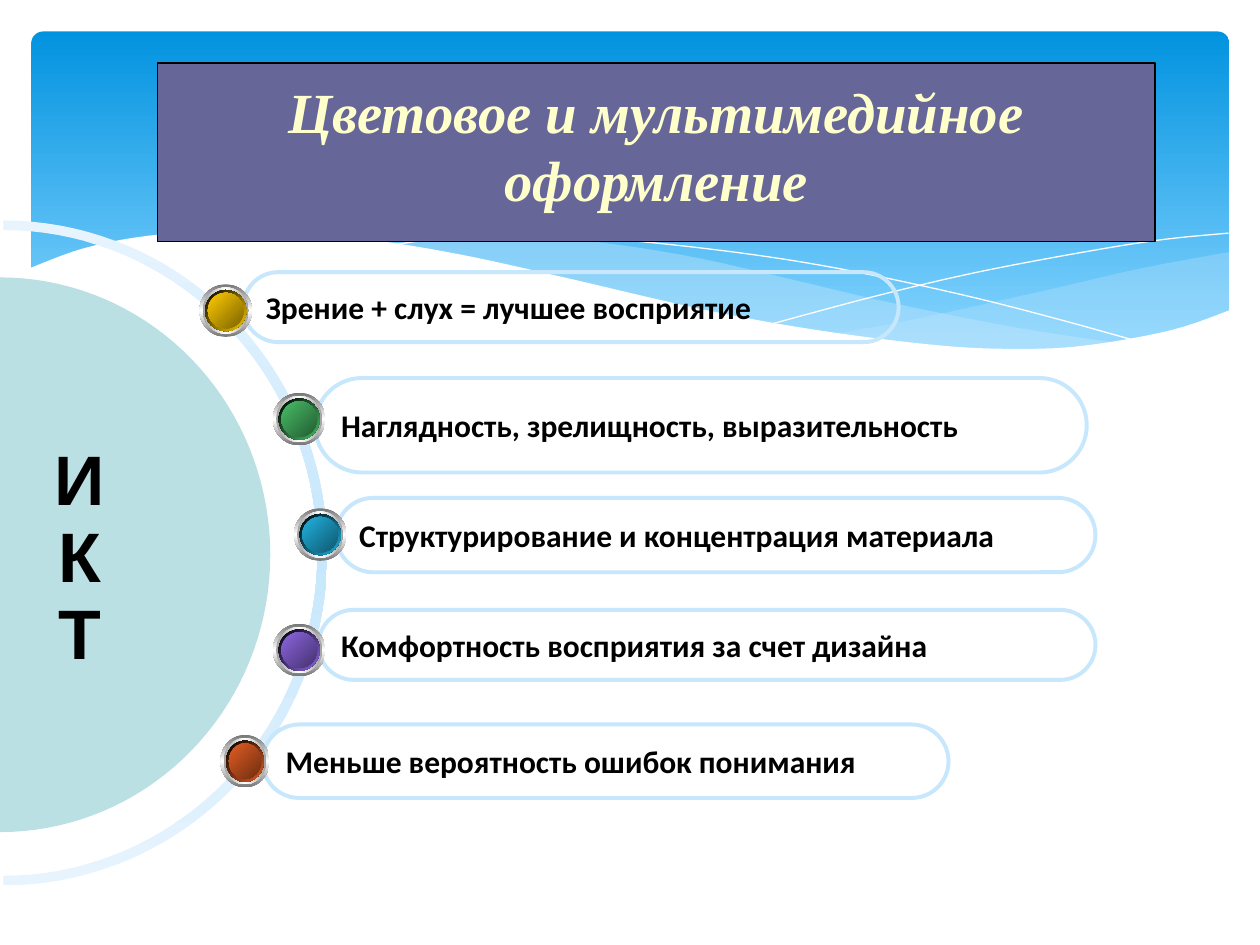
"""Build a slide on colour and multimedia design with a dial of five points."""
import math

import lxml.etree
import pptx
import pptx.dml.color
import pptx.enum.shapes
import pptx.enum.text
import pptx.oxml.ns
import pptx.util

Pt = pptx.util.Pt
RGB = pptx.dml.color.RGBColor
KIND = pptx.enum.shapes.MSO_SHAPE
ALIGN = pptx.enum.text.PP_ALIGN
ANCHOR = pptx.enum.text.MSO_ANCHOR
qn = pptx.oxml.ns.qn

WHITE = RGB(0xFF, 0xFF, 0xFF)
BLACK = RGB(0, 0, 0)
SKY = RGB(0x02, 0x93, 0xE0)
AZURE = RGB(0x83, 0xD3, 0xFE)
PALE = RGB(0xC6, 0xE7, 0xFC)
MIST = RGB(0xE7, 0xF4, 0xFE)
TEAL = RGB(0xBB, 0xE0, 0xE3)
PLUM = RGB(0x66, 0x66, 0x99)
CREAM = RGB(0xFF, 0xFF, 0xCC)
STEEL = RGB(0x76, 0x76, 0x76)
SILVER = RGB(0xA2, 0xA2, 0xA2)

PILLS = [
    ("Меньше вероятность ошибок понимания", (150, 414, 392, 42)),
    ("Комфортность восприятия за счет дизайна", (182, 348.5, 444, 40)),
    ("Структурирование и концентрация материала", (192, 284.5, 434, 42.5)),
    ("Наглядность, зрелищность, выразительность", (180, 216, 441, 54)),
    ("Зрение + слух = лучшее восприятие", (139, 155.5, 374.5, 40)),
]
BEADS = [
    ((114, 162.5, 30), RGB(0xFF, 0xCC, 0x00), RGB(0x7C, 0x63, 0x00)),
    ((156, 224.5, 30), RGB(0x48, 0xBE, 0x67), RGB(0x23, 0x5C, 0x32)),
    ((168, 290.5, 30), RGB(0x21, 0xB3, 0xE1), RGB(0x10, 0x57, 0x6D)),
    ((156, 356.5, 30), RGB(0x8D, 0x67, 0xE1), RGB(0x45, 0x32, 0x6D)),
    ((126, 420, 28), RGB(0xE3, 0x5E, 0x23), RGB(0x6E, 0x2E, 0x11)),
]
FRONT = ([(702.5, 144), (652, 153.4), (599, 165.6), (525, 182), (476, 191)],
         [(476, 191), (527, 197.3), (586, 200), (641, 198), (684, 190.4), (702.5, 178)])
REAR = ([(643, 196.6), (581, 187.2), (508.3, 172.8), (453, 159.8), (399.6, 147.6),
         (352, 139.7), (302.4, 134.6), (247.7, 133.9), (206, 137.5)],
        [(206, 137.5), (246, 143.3), (291, 152), (323.3, 159.8), (381.6, 172.8),
         (445, 185.8), (510.5, 195.8), (565, 200), (603.4, 200), (643, 196.6)])
FALL = [(222.5, 140.4), (254, 136), (299.5, 134.6), (352, 136.8), (419, 144),
        (479, 153.4), (547, 167.8), (598.3, 180.7), (653, 195.8)]
RISE = [(441.4, 185), (500.4, 169.2), (558.7, 155.5), (623.5, 143.3),
        (665.3, 136.8), (702, 133.2)]
CREST = [(703.4, 177), (669.6, 188.6), (621.4, 197.3), (582.5, 199.4), (535.7, 197.3),
         (466.6, 188.6), (399.6, 176.4), (321.8, 158.4), (262.8, 145.4), (210, 136.8),
         (165.6, 133.2), (127.4, 132.5), (85.7, 134.6), (48.2, 141.8), (16.6, 153.4)]


def curve(knots, steps=6):
    """Return points of a smooth curve through the knots."""
    ends = [knots[0], *knots, knots[-1]]
    points = [knots[0]]
    for a, b, c, d in zip(ends, ends[1:], ends[2:], ends[3:]):
        for step in range(1, steps + 1):
            t = step / steps
            points.append(tuple(
                (2 * q + (r - p) * t + (2 * p - 5 * q + 4 * r - s) * t ** 2
                 + (3 * q - p - 3 * r + s) * t ** 3) / 2
                for p, q, r, s in zip(a, b, c, d)))
    return points


def arc(x, y, wide, high, steps=72):
    """Return points of a right half ellipse from top to bottom."""
    turns = [math.pi * i / steps for i in range(steps + 1)]
    return [(x + wide * math.sin(t), y - high * math.cos(t)) for t in turns]


def shade(shape, stops, angle):
    """Fill a shape with a gradient of (place, colour) stops."""
    shape.fill.gradient()
    shape.fill.gradient_angle = -angle % 360
    band = shape.element.spPr.find(".//" + qn("a:gsLst"))
    for old in list(band):
        band.remove(old)
    for place, tone in stops:
        stop = lxml.etree.SubElement(band, qn("a:gs"), pos=str(place * 1000))
        lxml.etree.SubElement(stop, qn("a:srgbClr"), val=str(tone))


def paint(shape, fill=None, line=None, width=0, alpha=100):
    """Set the plain fill, line and shadow of a shape."""
    shape.shadow.inherit = False
    if fill is None:
        shape.fill.background()
    else:
        shape.fill.solid()
        shape.fill.fore_color.rgb = fill
        if alpha < 100:
            tone = shape.element.spPr.find(".//" + qn("a:srgbClr"))
            lxml.etree.SubElement(tone, qn("a:alpha"), val=str(alpha * 1000))
    if line is None:
        shape.line.fill.background()
    else:
        shape.line.color.rgb = line
        shape.line.width = Pt(width)


def block(slide, kind, box, **look):
    """Add a painted preset shape."""
    shape = slide.shapes.add_shape(kind, *map(Pt, box))
    paint(shape, **look)
    return shape


def outline(slide, points, close=True, **look):
    """Add a painted freeform through the points."""
    spots = [(Pt(x), Pt(y)) for x, y in points]
    pen = slide.shapes.build_freeform(*spots[0], scale=1.0)
    pen.add_line_segments(spots[1:], close=close)
    shape = pen.convert_to_shape()
    paint(shape, **look)
    return shape


def style(part, face, size, tone, slant=False):
    """Format every run of a paragraph in bold."""
    for run in part.runs:
        run.font.name, run.font.size = face, Pt(size)
        run.font.bold, run.font.italic = True, slant
        run.font.color.rgb = tone


def pill(slide, text, box):
    """Add an outlined pill with its label."""
    shape = block(slide, KIND.ROUNDED_RECTANGLE, box, line=PALE, width=2.25)
    shape.adjustments[0] = 0.5
    frame = shape.text_frame
    frame.text, frame.word_wrap = text, True
    frame.vertical_anchor = ANCHOR.MIDDLE
    frame.paragraphs[0].alignment = ALIGN.LEFT
    style(frame.paragraphs[0], "Calibri", 18, BLACK)


def bead(slide, spot, light, dark):
    """Add a coloured bead in a metal rim."""
    x, y, wide = spot
    layers = [
        (0, [(0, STEEL), (50, WHITE), (100, STEEL)], 90),
        (1.8, [(0, SILVER), (50, WHITE), (100, SILVER)], 0),
        (3.2, [(0, BLACK), (100, light)], 45),
        (4.8, [(0, light), (100, dark)], 45),
    ]
    for gap, stops, angle in layers:
        box = (x + gap, y + gap, wide - 2 * gap, 30 - 2 * gap)
        shade(block(slide, KIND.OVAL, box), stops, angle)


def waves(slide):
    """Add the blue sky and its waves."""
    sky = block(slide, KIND.ROUNDED_RECTANGLE, (18, 18, 684.5, 194.5))
    sky.adjustments[0] = 0.034
    shade(sky, [(0, SKY), (90, AZURE)], 90)
    for runs, alpha in ((FRONT, 29), (REAR, 40)):
        points = [spot for run in runs for spot in curve(run)]
        outline(slide, points, fill=PALE, alpha=alpha)
    for knots in (FALL, RISE):
        outline(slide, curve(knots), close=False, line=WHITE)
    outline(slide, curve(CREST) + [(16.6, 237), (703.4, 237)], fill=WHITE)


def dial(slide):
    """Add the half ring, the half disc and its letters."""
    ring = arc(2, 316, 185, 190) + arc(2, 316, 179.5, 184.5)[::-1]
    shade(outline(slide, ring), [(0, MIST), (50, PALE), (100, MIST)], 90)
    outline(slide, arc(0, 317, 154.5, 158.5), fill=TEAL)
    frame = slide.shapes.add_textbox(Pt(20), Pt(249.5), Pt(51), Pt(139)).text_frame
    frame.word_wrap = True
    frame.text = "И\nК\nТ"
    for part in frame.paragraphs:
        part.alignment, part.line_spacing = ALIGN.CENTER, Pt(44)
        style(part, "Arial", 40, BLACK)


def header(slide):
    """Add the title on its plum panel."""
    block(slide, KIND.RECTANGLE, (90, 36, 570, 102), fill=PLUM, line=BLACK, width=0.75)
    title = slide.shapes.title
    title.left, title.top, title.width, title.height = map(Pt, (84, 60, 582, 45))
    frame = title.text_frame
    frame.text, frame.word_wrap = "Цветовое и мультимедийное оформление", True
    frame.auto_size = pptx.enum.text.MSO_AUTO_SIZE.NONE
    frame.vertical_anchor = ANCHOR.MIDDLE
    frame.paragraphs[0].alignment = ALIGN.CENTER
    style(frame.paragraphs[0], "Times New Roman", 32.4, CREAM, slant=True)
    slide.shapes.element.append(title.element)


def main():
    """Build and save the slide."""
    deck = pptx.Presentation()
    deck.slide_width, deck.slide_height = Pt(720), Pt(540)
    slide = deck.slides.add_slide(deck.slide_layouts[5])
    waves(slide)
    dial(slide)
    for text, box in PILLS:
        pill(slide, text, box)
    for spot, light, dark in BEADS:
        bead(slide, spot, light, dark)
    header(slide)
    deck.save("out.pptx")


if __name__ == "__main__":
    main()
